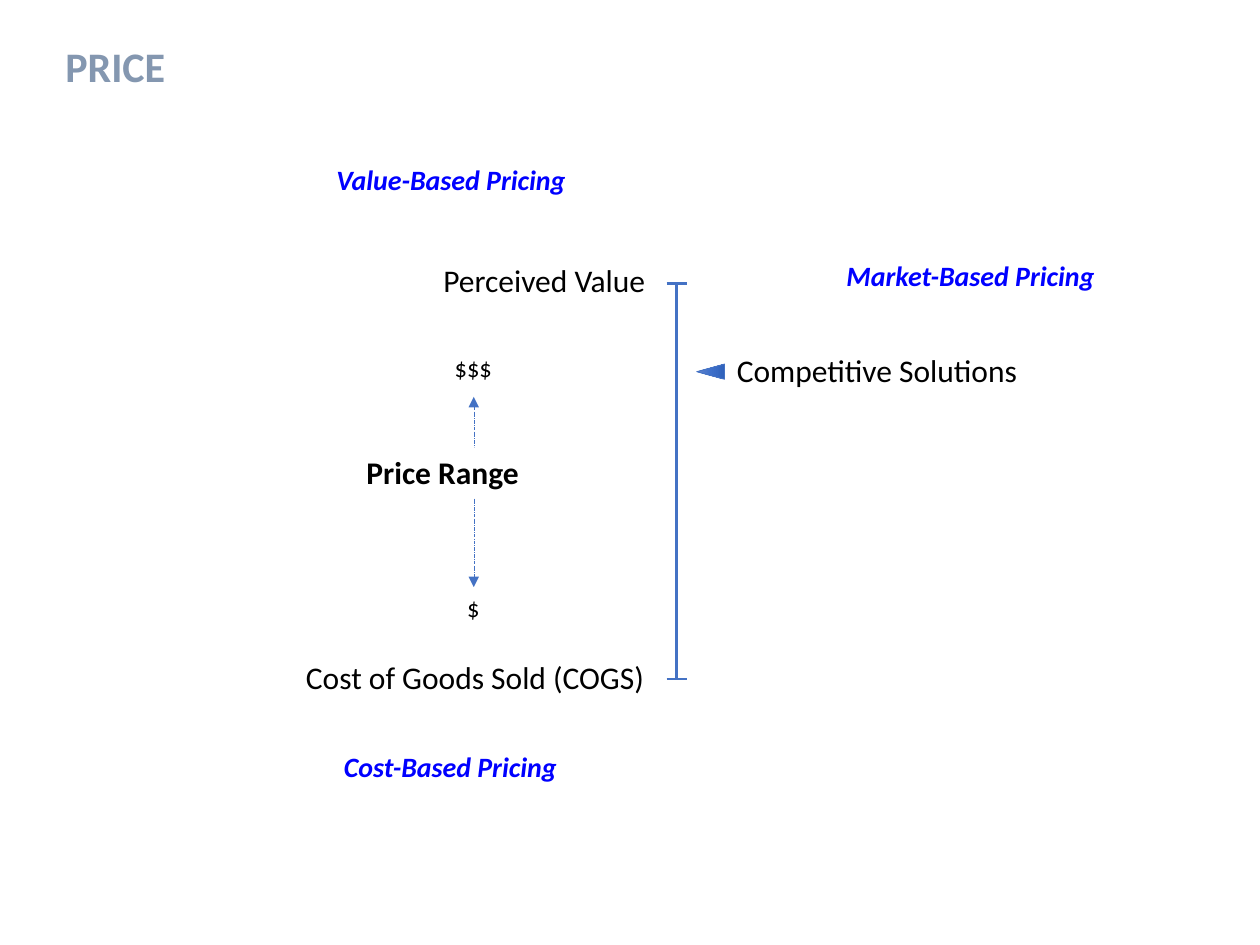
from copy import deepcopy

from lxml.etree import SubElement
from pptx import Presentation
from pptx.dml.color import RGBColor
from pptx.enum.dml import MSO_LINE
from pptx.enum.shapes import MSO_CONNECTOR, MSO_SHAPE
from pptx.enum.text import MSO_AUTO_SIZE, PP_ALIGN
from pptx.oxml.ns import qn
from pptx.util import Inches, Pt

WIDE, HIGH = Inches(10), Inches(7.5)
COLS, ROWS = 100, 75
FONT = "Calibri"
WHITE = RGBColor(0xFF, 0xFF, 0xFF)
BLACK = RGBColor(0x00, 0x00, 0x00)
SLATE = RGBColor(0x84, 0x97, 0xB0)
BLUE = RGBColor(0x00, 0x00, 0xFF)
STEEL = RGBColor(0x44, 0x72, 0xC4)
SHADES = (
    RGBColor(0x61, 0x83, 0xCB),
    RGBColor(0x3E, 0x70, 0xCA),
    RGBColor(0x30, 0x62, 0xBB),
)


def col(n):
    return round(WIDE * n / COLS)


def row(n):
    return round(HIGH * n / ROWS)


def area(x, y, w, h):
    return col(x), row(y), col(w), row(h)


def label(slide, text, box, size=18, color=BLACK, bold=False, italic=False,
          align=PP_ALIGN.LEFT, wrap=False, fill=None):
    shape = slide.shapes.add_textbox(*area(*box))
    if fill is not None:
        shape.fill.solid()
        shape.fill.fore_color.rgb = fill
    frame = shape.text_frame
    frame.word_wrap = wrap
    frame.auto_size = MSO_AUTO_SIZE.SHAPE_TO_FIT_TEXT
    frame.text = text
    para = frame.paragraphs[0]
    para.alignment = align
    font = para.runs[0].font
    font.name, font.size = FONT, Pt(size)
    font.bold, font.italic = bold, italic
    font.color.rgb = color


def method(slide, text, box, align=PP_ALIGN.CENTER):
    label(slide, text, box, 16, BLUE, True, True, align, True)


def line(slide, x1, y1, x2, y2, width=1.5):
    link = slide.shapes.add_connector(
        MSO_CONNECTOR.STRAIGHT, col(x1), row(y1), col(x2), row(y2))
    link.line.color.rgb = STEEL
    link.line.width = Pt(width)
    SubElement(link._element.spPr, qn("a:effectLst"))
    return link


def arrow(slide, x, top, foot):
    link = line(slide, x, top, x, foot, 0.25)
    link.line.dash_style = MSO_LINE.LONG_DASH_DOT
    stroke = link.line._get_or_add_ln()
    for end in ("a:headEnd", "a:tailEnd"):
        SubElement(stroke, qn(end), type="triangle")


def scale(slide, x, top, foot, half):
    line(slide, x, top, x, foot)
    for y in (top, foot):
        line(slide, x - half, y, x + half, y)


def marker(slide, box):
    shape = slide.shapes.add_shape(MSO_SHAPE.ISOSCELES_TRIANGLE, *area(*box))
    shape.shadow.inherit = False
    shape.rotation = 270
    shape.line.color.rgb = STEEL
    shape.line.width = Pt(0.5)
    fill = shape.fill
    fill.gradient()
    fill.gradient_angle = 270
    stops = shape._element.spPr.find(".//" + qn("a:gsLst"))
    stops.append(deepcopy(stops[0]))
    for i, (stop, shade) in enumerate(zip(fill.gradient_stops, SHADES)):
        stop.position = i / 2
        stop.color.rgb = shade


def main():
    deck = Presentation()
    deck.slide_width, deck.slide_height = WIDE, HIGH
    slide = deck.slides.add_slide(deck.slide_layouts[6])

    label(slide, "PRICE", (4.2, 2.7, 42.2, 5), 24, SLATE, True, wrap=True)
    label(slide, "Cost of Goods Sold (COGS)", (23.3, 51.7, 29.2, 4))
    label(slide, "Perceived Value", (34.2, 20.2, 18.2, 4))
    label(slide, "Competitive Solutions", (57.5, 27.4, 24.6, 4))
    marker(slide, (55.8, 28.4, 1.2, 2.2))
    scale(slide, 53.7, 22.5, 53.9, 0.8)

    arrow(slide, 37.6, 31.5, 46.6)
    label(slide, "Price Range", (28.1, 35.5, 14.2, 4), bold=True, fill=WHITE)
    label(slide, "$", (36.1, 46.6, 3, 3.4), 14, fill=WHITE)
    label(slide, "$$$", (35.1, 27.5, 5, 3.4), 14, fill=WHITE)

    method(slide, "Cost-Based Pricing", (25.9, 59, 19.7, 3.7))
    method(slide, "Value-Based Pricing", (25.2, 12.4, 21.2, 3.7))
    method(slide, "Market-Based Pricing", (66.2, 20, 23.7, 3.7), PP_ALIGN.LEFT)

    deck.save("out.pptx")


if __name__ == "__main__":
    main()
